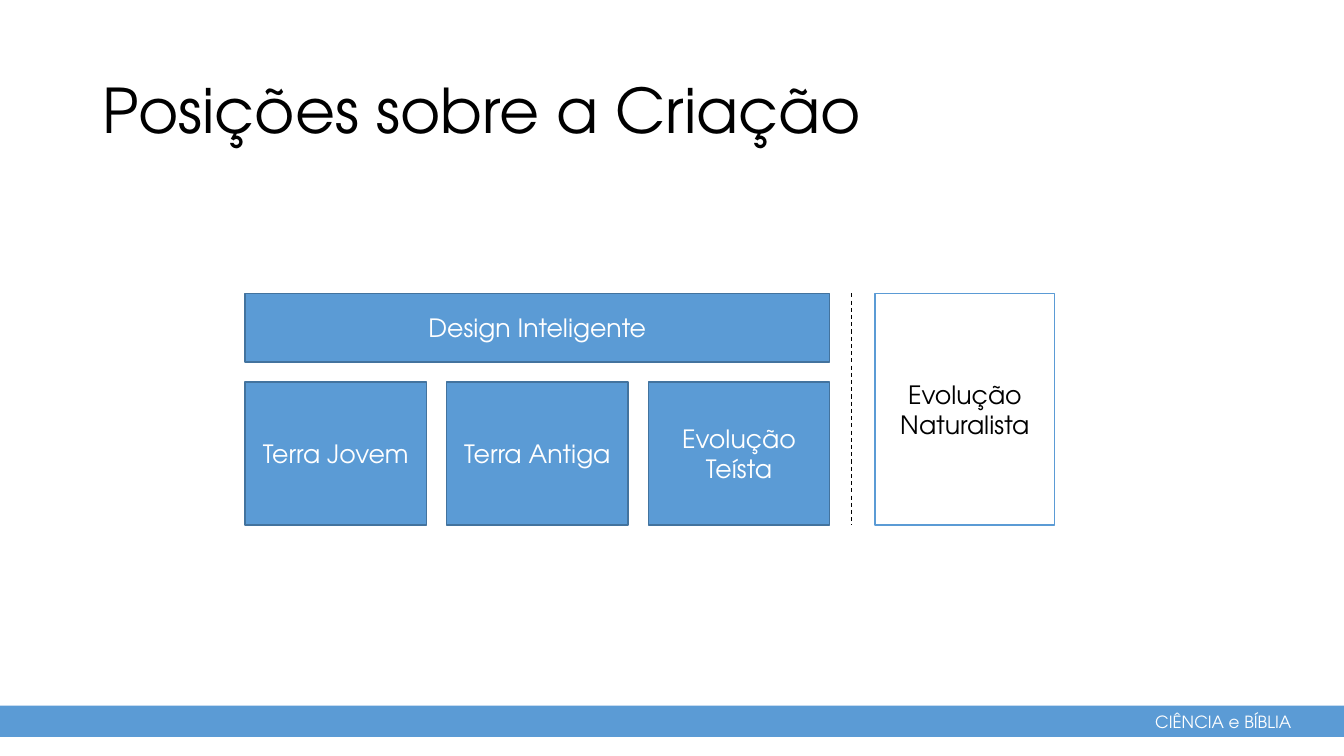
from dataclasses import dataclass

from lxml.etree import SubElement
from pptx import Presentation
from pptx.dml.color import RGBColor
from pptx.enum.dml import MSO_LINE
from pptx.enum.shapes import MSO_CONNECTOR, MSO_SHAPE
from pptx.enum.text import MSO_ANCHOR, PP_ALIGN
from pptx.oxml.ns import qn
from pptx.util import Inches, Pt


@dataclass(frozen=True)
class Theme:
    font: str = "TeX Gyre Adventor"
    blue: str = "5B9BD5"
    edge: str = "43739E"
    white: str = "FFFFFF"
    black: str = "000000"
    title: int = 44
    label: int = 18
    footer: int = 12


THEME = Theme()
WIDTH, HEIGHT = 13.33, 7.5


def rgb(value):
    return RGBColor.from_string(value)


def set_font(p, size, color):
    p.font.name = THEME.font
    p.font.size = Pt(size)
    p.font.color.rgb = rgb(color)


def place(sp, box):
    sp.left, sp.top, sp.width, sp.height = map(Inches, box)


def add_block(slide, box, fill, edge=None, text="", color=THEME.white):
    sp = slide.shapes.add_shape(MSO_SHAPE.RECTANGLE, *map(Inches, box))
    sp.shadow.inherit = False
    sp.fill.solid()
    sp.fill.fore_color.rgb = rgb(fill)
    if edge:
        sp.line.color.rgb = rgb(edge)
        sp.line.width = Pt(1)
    else:
        sp.line.fill.background()
    if text:
        tf = sp.text_frame
        tf.word_wrap = True
        tf.vertical_anchor = MSO_ANCHOR.MIDDLE
        p = tf.paragraphs[0]
        p.text = text
        p.alignment = PP_ALIGN.CENTER
        set_font(p, THEME.label, color)


def add_divider(slide, x, top, bottom):
    line = slide.shapes.add_connector(
        MSO_CONNECTOR.STRAIGHT, *map(Inches, (x, top, x, bottom)))
    line.line.color.rgb = rgb(THEME.black)
    line.line.width = Pt(0.75)
    line.line.dash_style = MSO_LINE.DASH
    SubElement(line._element.spPr, qn("a:effectLst"))


def add_title(slide, box, text):
    sp = slide.shapes.title
    place(sp, box)
    tf = sp.text_frame
    tf.word_wrap = True
    tf.vertical_anchor = MSO_ANCHOR.MIDDLE
    p = tf.paragraphs[0]
    p.text = text
    p.alignment = PP_ALIGN.LEFT
    p.line_spacing = 0.9
    set_font(p, THEME.title, THEME.black)


def add_footer(slide, box, text):
    left, top, width, height = box
    add_block(slide, box, THEME.blue)
    label_width, right_margin = 1.57, 0.4
    label = (left + width - right_margin - label_width, top + 0.01, label_width, height)
    sp = slide.shapes.add_textbox(*map(Inches, label))
    tf = sp.text_frame
    tf.word_wrap = False
    p = tf.paragraphs[0]
    p.text = text
    set_font(p, THEME.footer, THEME.white)


def add_positions(slide, box):
    """Design positions in three columns under a header, naturalism beyond the divider."""
    left, top, width, height = box
    gap, column, header = 0.2, 1.8, 0.68
    row_top = top + header + gap
    design_width = 3 * column + 2 * gap
    for i, text in enumerate(("Terra Jovem", "Terra Antiga", "Evolução Teísta")):
        cell = (left + i * (column + gap), row_top, column, top + height - row_top)
        add_block(slide, cell, THEME.blue, THEME.edge, text)
    add_block(slide, (left, top, design_width, header),
              THEME.blue, THEME.edge, "Design Inteligente")

    divider = left + design_width + 0.22
    natural = divider + 0.23
    add_block(slide, (natural, top, left + width - natural, height),
              THEME.white, THEME.blue, "Evolução Naturalista", THEME.black)
    add_divider(slide, divider, top, top + height)


def main():
    prs = Presentation()
    prs.slide_width, prs.slide_height = Inches(WIDTH), Inches(HEIGHT)
    slide = prs.slides.add_slide(prs.slide_layouts[5])
    add_footer(slide, (0, 7, WIDTH, 0.31), "CIÊNCIA e BÍBLIA")
    add_title(slide, (0.92, 0.4, 11.5, 1.45), "Posições sobre a Criação")
    add_positions(slide, (2.43, 2.91, 8.03, 2.3))
    prs.save("out.pptx")


if __name__ == "__main__":
    main()
